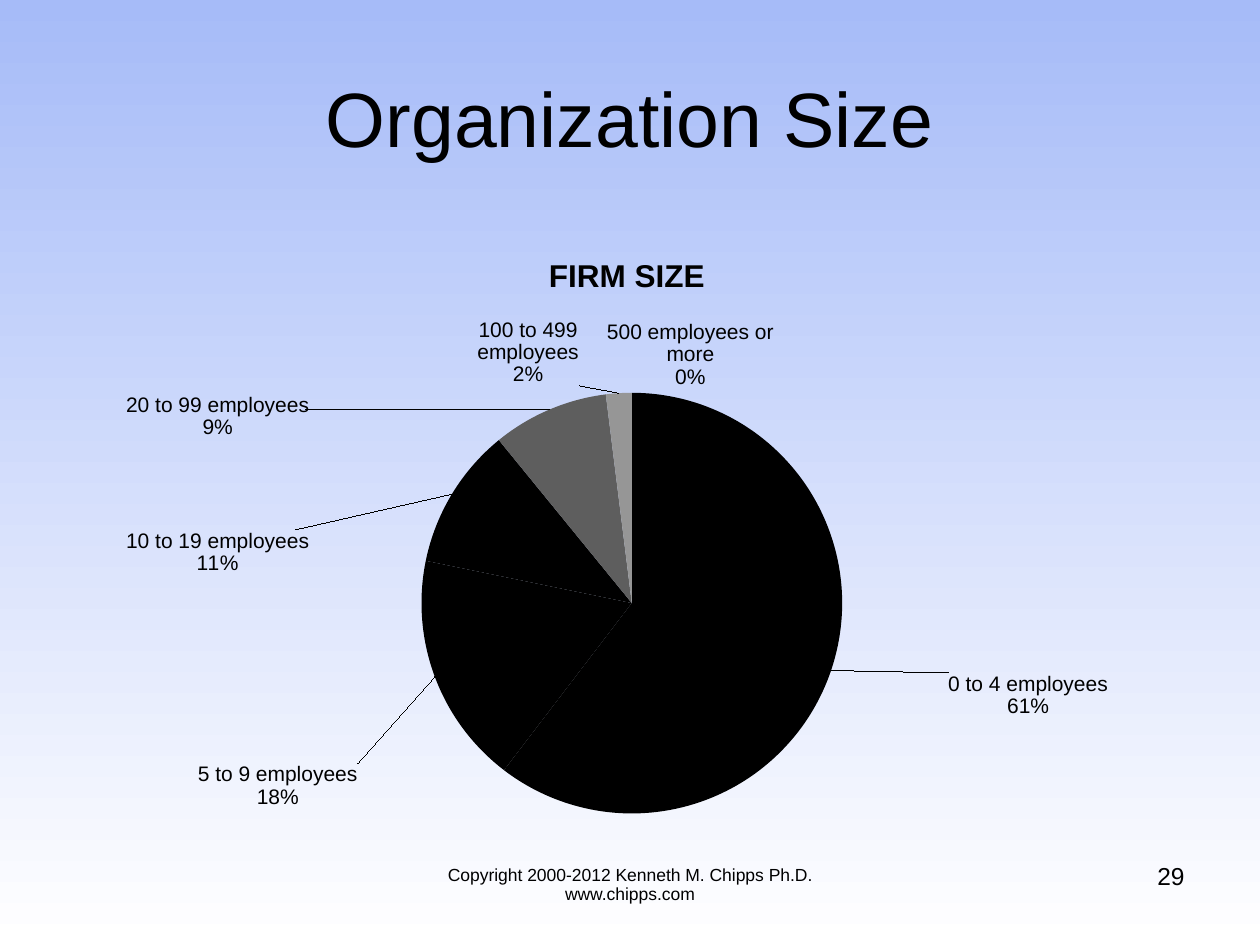
from dataclasses import dataclass

from lxml import etree
from pptx import Presentation
from pptx import util as u
from pptx.chart import data as cd
from pptx.dml.color import RGBColor
from pptx.enum import chart as ch, text as tx
from pptx.oxml import ns

FACE = "Arial"
INK = "000000"


@dataclass
class Note:
    text: str
    box: tuple
    size: int
    align: tx.PP_ALIGN = tx.PP_ALIGN.CENTER
    anchor: tx.MSO_ANCHOR = tx.MSO_ANCHOR.TOP
    space: float = 0.9


@dataclass
class Slice:
    name: str
    share: int
    fill: str
    shift: tuple = ()
    label: str = ""


NOTES = [
    Note("Organization Size", (0.5, 0.3, 9, 1.25), 44, anchor=tx.MSO_ANCHOR.MIDDLE, space=1.0),
    Note("Copyright 2000-2012 Kenneth M. Chipps Ph.D. www.chipps.com", (3, 6.83, 4, 0.52), 10),
    Note("29", (7.17, 6.81, 2.33, 0.52), 14, tx.PP_ALIGN.RIGHT),
    Note("500 employees or more\n0%", (4.68, 2.5, 1.6, 0.6), 12),
]
SLICES = [
    Slice("0 to 4 employees", 61, INK, (0.11, 0), "0 to 4 employees\n61%"),
    Slice("5 to 9 employees", 18, INK, (-0.07, 0.14)),
    Slice("10 to 19 employees", 11, INK, (-0.15, 0.14)),
    Slice("20 to 99 employees", 9, "5E5E5E", (-0.24, 0.06)),
    Slice("100 to 499 employees", 2, "969696", (-0.09, 0), "100 to 499\nemployees\n2%"),
    Slice("500 employees or more", 0, "C0C0C0"),
]


def put(thing, values: dict) -> None:
    for name, value in values.items():
        setattr(thing, name, value)


def paint(color, code: str) -> None:
    color.rgb = RGBColor.from_string(code)


def style(font, size: int, bold: bool = False) -> None:
    put(font, {"name": FACE, "size": u.Pt(size), "bold": bold})
    paint(font.color, INK)


def fill_text(frame, words: str, size: int, bold: bool = False) -> None:
    frame.text = words
    for para in frame.paragraphs:
        for run in para.runs:
            style(run.font, size, bold)


def write(slide, note: Note) -> None:
    frame = slide.shapes.add_textbox(*map(u.Inches, note.box)).text_frame
    put(frame, {"word_wrap": True, "vertical_anchor": note.anchor})
    fill_text(frame, note.text, note.size)
    for para in frame.paragraphs:
        put(para, {"alignment": note.align, "line_spacing": note.space})


def place(values: dict):
    layout = etree.Element(ns.qn("c:layout"))
    manual = etree.SubElement(layout, ns.qn("c:manualLayout"))
    for name, value in values.items():
        etree.SubElement(manual, ns.qn(f"c:{name}"), val=str(value))
    return layout


def draw(slide, parts: list[Slice]) -> None:
    data = cd.CategoryChartData(number_format="#,##0")
    data.categories = [part.name for part in parts]
    data.add_series("Series 1", [part.share for part in parts])
    box = map(u.Inches, (1, 1.83, 7.95, 4.77))
    chart = slide.shapes.add_chart(ch.XL_CHART_TYPE.PIE, *box, data).chart
    put(chart, {"has_legend": False, "has_title": True})
    style(chart.font, 10)
    fill_text(chart.chart_title.text_frame, "FIRM SIZE", 18, True)

    plot = chart.plots[0]
    plot.vary_by_categories = True
    row = plot.series[0]
    labels = row.data_labels
    put(labels, {"show_value": False, "show_category_name": True, "show_percentage": True,
                 "number_format": "0%", "number_format_is_linked": False,
                 "position": ch.XL_LABEL_POSITION.BEST_FIT})
    style(labels.font, 12)
    for spot, part in enumerate(parts):
        point = row.points[spot]
        point.format.fill.solid()
        paint(point.format.fill.fore_color, part.fill)
        point.format.line.fill.background()
        if part.label:
            fill_text(point.data_label.text_frame, part.label, 12)
        elif part.shift:
            style(point.data_label.font, 12)
        if part.shift:
            point.data_label.position = ch.XL_LABEL_POSITION.OUTSIDE_END

    root = chart.element
    for label in root.xpath(".//c:dLbl"):
        spot = label.find(ns.qn("c:idx"))
        left, top = parts[int(spot.get("val"))].shift
        spot.addnext(place({"x": left, "y": top}))
        for name, value in {"Val": 0, "CatName": 1, "Percent": 1}.items():
            label.find(ns.qn(f"c:show{name}")).set("val", str(value))
    for flag in root.xpath(".//c:showBubbleSize"):
        split = etree.Element(ns.qn("c:separator"))
        split.text = "\n"
        flag.addnext(split)

    area = root.xpath(".//c:plotArea")[0]
    for old in area.findall(ns.qn("c:layout")):
        area.remove(old)
    area.insert(0, place({"layoutTarget": "inner", "xMode": "edge", "yMode": "edge",
                          "x": 0.29, "y": 0.27, "w": 0.43, "h": 0.7}))


def main() -> None:
    deck = Presentation()
    put(deck, {"slide_width": u.Inches(10), "slide_height": u.Inches(7.5)})
    slide = deck.slides.add_slide(deck.slide_layouts[6])
    fill = slide.background.fill
    fill.gradient()
    fill.gradient_angle = 270
    for stop, code in zip(fill.gradient_stops, ("A6BBF8", "FFFFFF")):
        paint(stop.color, code)
    draw(slide, SLICES)
    for note in NOTES:
        write(slide, note)
    deck.save("out.pptx")


if __name__ == "__main__":
    main()
